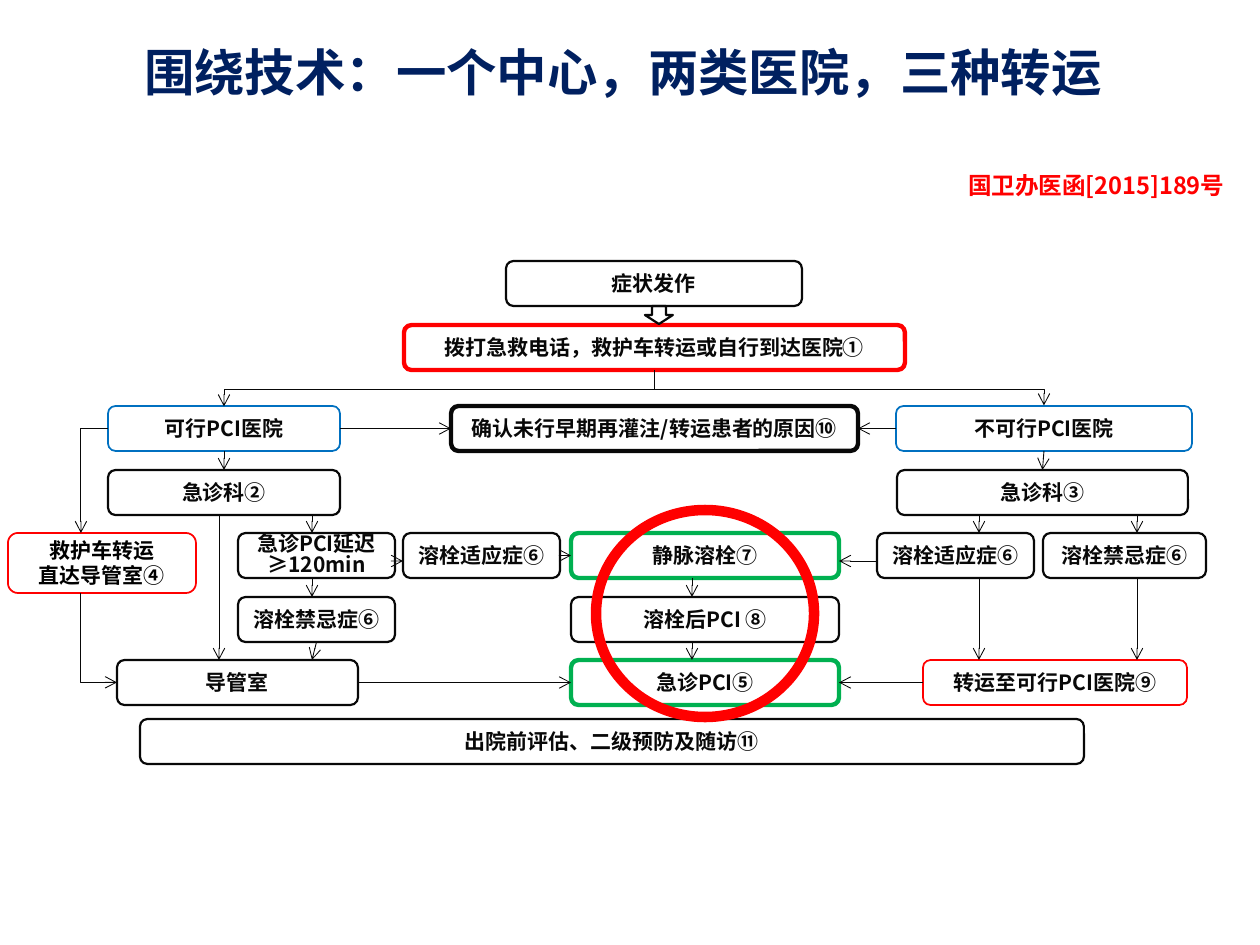
from dataclasses import dataclass

from lxml import etree
from pptx import Presentation
from pptx.dml.color import RGBColor
from pptx.enum.shapes import MSO_CONNECTOR, MSO_SHAPE
from pptx.enum.text import MSO_ANCHOR, PP_ALIGN
from pptx.oxml.ns import qn
from pptx.util import Pt

STRAIGHT, ELBOW = MSO_CONNECTOR.STRAIGHT, MSO_CONNECTOR.ELBOW
ROUNDED, DOWN_ARROW, OVAL = MSO_SHAPE.ROUNDED_RECTANGLE, MSO_SHAPE.DOWN_ARROW, MSO_SHAPE.OVAL
MIDDLE, CENTER, LEFT_ALIGN = MSO_ANCHOR.MIDDLE, PP_ALIGN.CENTER, PP_ALIGN.LEFT
TOP, LEFT, BOTTOM, RIGHT = range(4)
PX = 914400 / 126


@dataclass(frozen=True)
class Theme:
    font: str = "Noto Sans CJK SC"
    navy: str = "002060"
    ink: str = "080808"
    black: str = "000000"
    red: str = "FF0000"
    blue: str = "0070C0"
    green: str = "00B050"
    white: str = "FFFFFF"
    title_size: float = 28.8
    note_size: float = 13.5
    step_size: float = 12
    connector_width: float = 0.5
    ring_width: float = 6


THEME = Theme()
TITLE = "围绕技术：一个中心，两类医院，三种转运"
NOTE = "国卫办医函[2015]189号"

STYLES = {
    "plain": (THEME.ink, 1.25, None),
    "key": (THEME.ink, 2.5, None),
    "call": (THEME.red, 2.5, None),
    "therapy": (THEME.green, 2.5, None),
    "hospital": (THEME.blue, 1, THEME.white),
    "transfer": (THEME.red, 1, THEME.white),
}
STEP_HEIGHT, TALL_STEP_HEIGHT = 45, 60
STEP_INSET, DELAY_INSET, DELAY_SPACING = 9, 13, 0.85
ROW_TOPS = {"onset": 261, "call": 325, "hospital": 406, "emergency": 470,
            "indication": 533, "contraindication": 597, "lab": 660, "discharge": 719}

STEPS = {
    "onset": ("症状发作", "onset", 506, 296, "plain"),
    "call": ("拨打急救电话，救护车转运或自行到达医院①", "call", 404, 501, "call"),
    "pci": ("可行PCI医院", "hospital", 108, 232, "hospital"),
    "pci_er": ("急诊科②", "emergency", 108, 232, "plain"),
    "ambulance": ("救护车转运\n直达导管室④", "indication", 8, 188, "transfer"),
    "cath_lab": ("导管室", "lab", 117, 241, "plain"),
    "discharge": ("出院前评估、二级预防及随访⑪", "discharge", 140, 944, "plain"),
    "emergency_pci": ("急诊PCI⑤", "lab", 571, 268, "therapy"),
    "later_pci": ("溶栓后PCI ⑧", "contraindication", 571, 268, "plain"),
    "thrombolysis": ("静脉溶栓⑦", "indication", 571, 268, "therapy"),
    "reason": ("确认未行早期再灌注/转运患者的原因⑩", "hospital", 451, 407, "key"),
    "non_pci": ("不可行PCI医院", "hospital", 896, 296, "hospital"),
    "non_pci_er": ("急诊科③", "emergency", 897, 291, "plain"),
    "fit_right": ("溶栓适应症⑥", "indication", 877, 157, "plain"),
    "unfit_right": ("溶栓禁忌症⑥", "indication", 1043, 163, "plain"),
    "transfer": ("转运至可行PCI医院⑨", "lab", 923, 264, "transfer"),
    "fit_left": ("溶栓适应症⑥", "indication", 403, 157, "plain"),
    "unfit_left": ("溶栓禁忌症⑥", "contraindication", 238, 157, "plain"),
    "delay": ("急诊PCI延迟≥120min", "indication", 238, 157, "plain"),
}

ARROWS = [
    (("pci", RIGHT), ("reason", LEFT)),
    (("non_pci", LEFT), ("reason", RIGHT)),
    (("pci", BOTTOM), ("pci_er", TOP)),
    (("non_pci", BOTTOM), ("non_pci_er", TOP)),
    (("transfer", LEFT), ("emergency_pci", RIGHT)),
    (("cath_lab", RIGHT), ("emergency_pci", LEFT)),
    (("fit_left", RIGHT), ("thrombolysis", LEFT)),
    (("unfit_left", BOTTOM), (312, 660)),
    ((312, 515), (312, 533)),
    ((312, 578), (312, 597)),
    ((395, 561), (403, 561)),
    ((877, 561), (839, 561)),
    ((692, 578), (692, 597)),
    ((692, 642), (692, 660)),
    ((1137, 515), (1137, 533)),
    ((1137, 578), (1137, 660)),
    ((979, 515), (979, 533)),
    ((979, 578), (979, 660)),
    ((219, 515), (219, 660)),
]
BRANCH = {"left": 224, "right": 1044, "top": 389, "bottom": 406}
AMBULANCE_LANE = 81


def px(*lengths):
    return [round(length * PX) for length in lengths]


def write(frame, text, size, color, align):
    frame.text = text
    for paragraph in frame.paragraphs:
        paragraph.alignment = align
        for run in paragraph.runs:
            font = run.font
            font.size, font.bold, font.name = Pt(size), True, THEME.font
            font.color.rgb = RGBColor.from_string(color)
            etree.SubElement(run._r.rPr, qn("a:ea"), typeface=THEME.font)


def draw(slide, kind, box, line, width, fill=None):
    shape = slide.shapes.add_shape(kind, *px(*box))
    shape.shadow.inherit = False
    shape.line.color.rgb = RGBColor.from_string(line)
    shape.line.width = Pt(width)
    if fill:
        shape.fill.solid()
        shape.fill.fore_color.rgb = RGBColor.from_string(fill)
    else:
        shape.fill.background()
    return shape


def add_step(slide, text, row, left, width, style):
    height = TALL_STEP_HEIGHT if "\n" in text else STEP_HEIGHT
    step = draw(slide, ROUNDED, (left, ROW_TOPS[row], width, height), *STYLES[style])
    frame = step.text_frame
    frame.word_wrap, frame.vertical_anchor = True, MIDDLE
    frame.margin_left, frame.margin_right = px(STEP_INSET, STEP_INSET)
    frame.margin_top = frame.margin_bottom = 0
    write(frame, text, THEME.step_size, THEME.black if "\n" in text else THEME.ink, CENTER)
    return step


def connect(slide, steps, start, end, heads=("tailEnd",), kind=STRAIGHT):
    points = [(0, 0) if isinstance(spot[0], str) else spot for spot in (start, end)]
    link = slide.shapes.add_connector(kind, *px(*points[0], *points[1]))
    for spot, join in ((start, link.begin_connect), (end, link.end_connect)):
        if isinstance(spot[0], str):
            join(steps[spot[0]], spot[1])
    link.line.color.rgb = RGBColor.from_string(THEME.ink)
    link.line.width = Pt(THEME.connector_width)
    properties = link._element.spPr
    for head in heads:
        etree.SubElement(properties.find(qn("a:ln")), qn("a:" + head), type="arrow")
    etree.SubElement(properties, qn("a:effectLst"))
    return link


def add_corner(slide, steps, start, end, head):
    corner = connect(slide, steps, start, end, (head,), ELBOW)
    corner._element.spPr.find(qn("a:prstGeom")).set("prst", "bentConnector2")


def add_branch(slide, steps, left, right, top, bottom):
    middle, half = (left + right) / 2, (right - left) / 2
    branch = connect(slide, steps, (middle + 0.5, bottom + half), (middle - 0.5, bottom - half),
                     ("headEnd", "tailEnd"), ELBOW)
    properties = branch._element.spPr
    properties.find(qn("a:xfrm")).set("rot", "5400000")
    guides = properties.find(qn("a:prstGeom")).get_or_add_avLst()
    etree.SubElement(guides, qn("a:gd"), name="adj1", fmla=f"val {(bottom - top) * 100000}")


def main():
    deck = Presentation()
    deck.slide_width, deck.slide_height = px(1260, 945)
    slide = deck.slides.add_slide(deck.slide_layouts[5])

    title = slide.shapes.title
    title.left, title.top, title.width, title.height = px(108, 27, 1030, 97)
    title.text_frame.vertical_anchor = MIDDLE
    write(title.text_frame, TITLE, THEME.title_size, THEME.navy, CENTER)
    title.text_frame.paragraphs[0].line_spacing = 0.9

    steps = {key: add_step(slide, *step) for key, step in STEPS.items()}
    delay = steps["delay"].text_frame
    delay.margin_left, delay.margin_right = px(DELAY_INSET, DELAY_INSET)
    delay.paragraphs[0].line_spacing = DELAY_SPACING
    draw(slide, DOWN_ARROW, (645, 306, 28, 18), THEME.ink, 1.25)

    connect(slide, steps, ("call", BOTTOM), (654.5, BRANCH["top"]), ())
    add_branch(slide, steps, **BRANCH)
    for start, end in ARROWS:
        connect(slide, steps, start, end)
    ambulance_top = ROW_TOPS["indication"]
    ambulance_bottom = ambulance_top + TALL_STEP_HEIGHT
    add_corner(slide, steps, ("pci", LEFT), (AMBULANCE_LANE, ambulance_top), "tailEnd")
    add_corner(slide, steps, ("cath_lab", LEFT), (AMBULANCE_LANE, ambulance_bottom), "headEnd")

    note = slide.shapes.add_textbox(*px(956, 165, 291, 42)).text_frame
    note.word_wrap = True
    write(note, NOTE, THEME.note_size, THEME.red, LEFT_ALIGN)
    draw(slide, OVAL, (596, 510, 218, 207), THEME.red, THEME.ring_width)

    deck.save("out.pptx")


if __name__ == "__main__":
    main()
